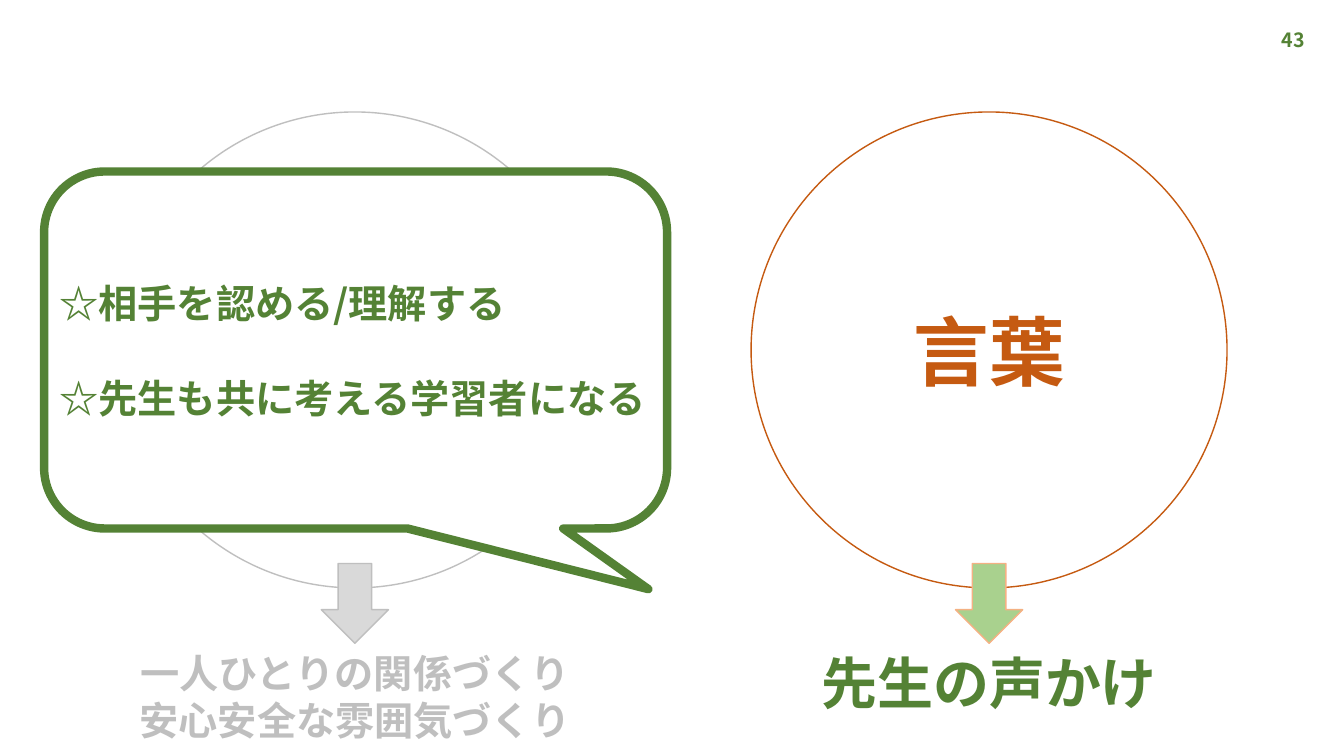
from dataclasses import dataclass

from lxml import etree
from pptx import Presentation
from pptx.dml.color import RGBColor
from pptx.enum.shapes import MSO_SHAPE
from pptx.enum.text import MSO_ANCHOR, PP_ALIGN
from pptx.oxml.ns import qn
from pptx.util import Pt

OVAL, ARROW = MSO_SHAPE.OVAL, MSO_SHAPE.DOWN_ARROW
BUBBLE = MSO_SHAPE.ROUNDED_RECTANGULAR_CALLOUT
LEFT, MID, RIGHT = PP_ALIGN.LEFT, PP_ALIGN.CENTER, PP_ALIGN.RIGHT
MIDDLE = MSO_ANCHOR.MIDDLE


@dataclass(frozen=True)
class Theme:
    font: str = "Noto Sans CJK JP"
    white: str = "FFFFFF"
    green: str = "548235"
    leaf: str = "A9D18E"
    rust: str = "C55A11"
    peach: str = "F4B183"
    gray: str = "BFBFBF"
    pale: str = "D9D9D9"
    small: int = 14
    body: int = 28
    large: int = 40
    huge: int = 54


theme = Theme()
deck = Presentation()
deck.slide_width, deck.slide_height = Pt(960), Pt(540)
slide = deck.slides.add_slide(deck.slide_layouts[6])


def draw(kind, box, fill, line, width=1):
    shape = slide.shapes.add_shape(kind, *map(Pt, box))
    shape.shadow.inherit = False
    shape.fill.solid()
    shape.fill.fore_color.rgb = RGBColor.from_string(fill)
    shape.line.color.rgb = RGBColor.from_string(line)
    shape.line.width = Pt(width)
    return shape


def write(shape, lines, size, color, align=MID, gap=0):
    frame = shape.text_frame
    frame.text = "\n".join(lines)
    for row, para in enumerate(frame.paragraphs):
        para.alignment = align
        para.space_before = Pt(gap if row else 0)
        font = para.font
        font.name, font.size, font.bold = theme.font, Pt(size), True
        font.color.rgb = RGBColor.from_string(color)
        # East Asian typeface
        base = para._p.pPr.find(qn("a:defRPr"))
        etree.SubElement(base, qn("a:ea"), typeface=theme.font)
    return frame


# Page number
page = slide.shapes.add_textbox(Pt(723), Pt(13.5), Pt(216), Pt(29))
write(page, ["43"], theme.small, theme.green, RIGHT).vertical_anchor = MIDDLE

# Two columns: circle, arrow and caption on a shared centre line
columns = [
    (253.5, theme.gray, theme.pale, theme.gray, "",
     ["一人ひとりの関係づくり", "安心安全な雰囲気づくり"], theme.body, theme.gray),
    (706.5, theme.rust, theme.leaf, theme.peach, "言葉",
     ["先生の声かけ"], theme.large, theme.green),
]
for mid, ring, fill, edge, word, notes, size, ink in columns:
    disc = draw(OVAL, (mid - 170, 80, 340, 340), theme.white, ring)
    if word:
        write(disc, [word], theme.huge, ring).vertical_anchor = MIDDLE
    label = slide.shapes.add_textbox(Pt(mid - 163), Pt(460), Pt(326), Pt(75))
    write(label, notes, size, ink).word_wrap = False
    draw(ARROW, (mid - 24, 402.5, 48, 57), fill, edge)

# Speech bubble over the left circle
bubble = draw(BUBBLE, (31.5, 122.5, 445, 255), theme.white, theme.green, 6)
for i, value in enumerate((0.47, 0.67, 0.17)):
    bubble.adjustments[i] = value

# Points in the bubble
points = slide.shapes.add_textbox(Pt(35.5), Pt(196), Pt(438), Pt(109))
write(points, ["☆相手を認める/理解する", "☆先生も共に考える学習者になる"],
      theme.body, theme.green, LEFT, gap=34).word_wrap = False

deck.save("out.pptx")
